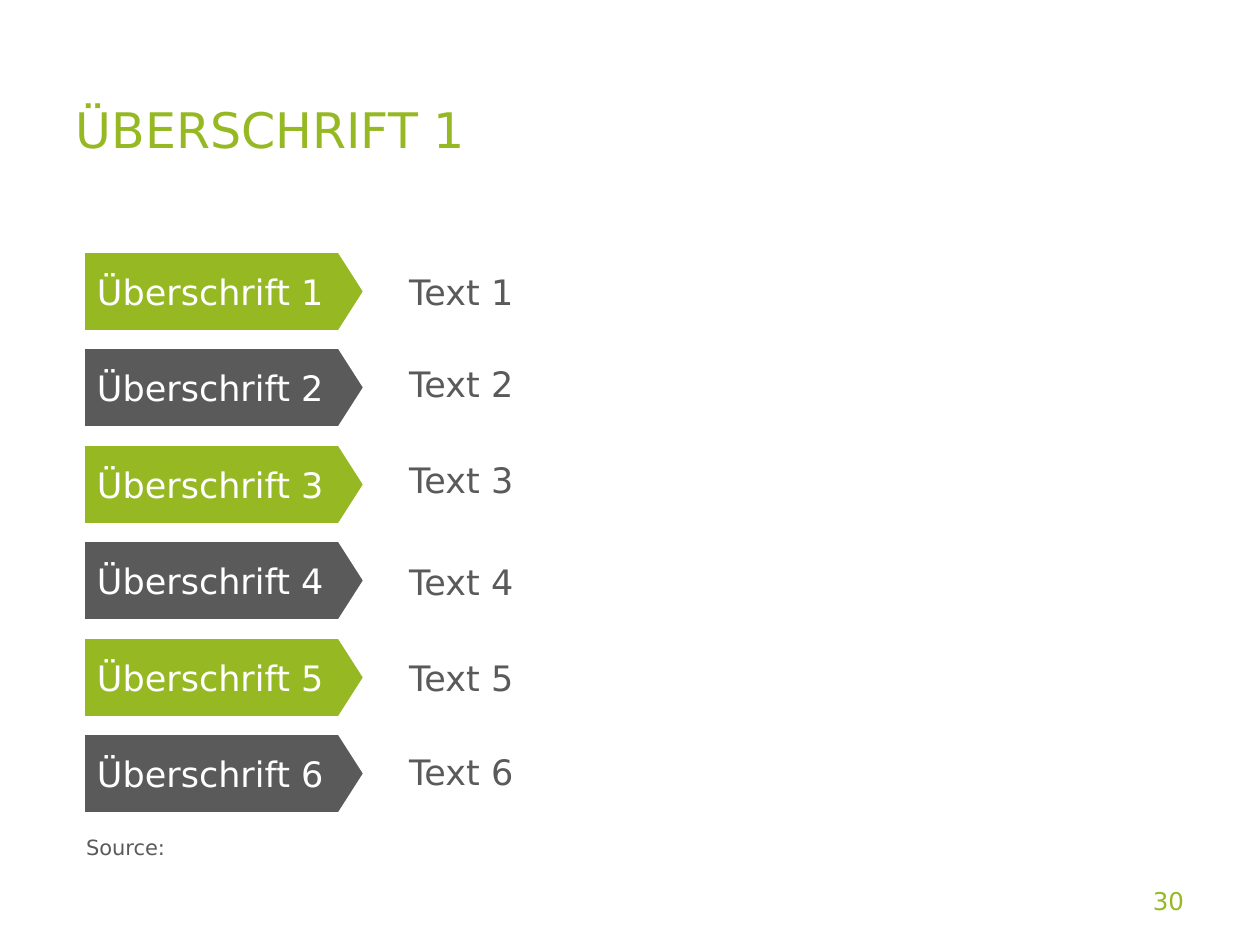
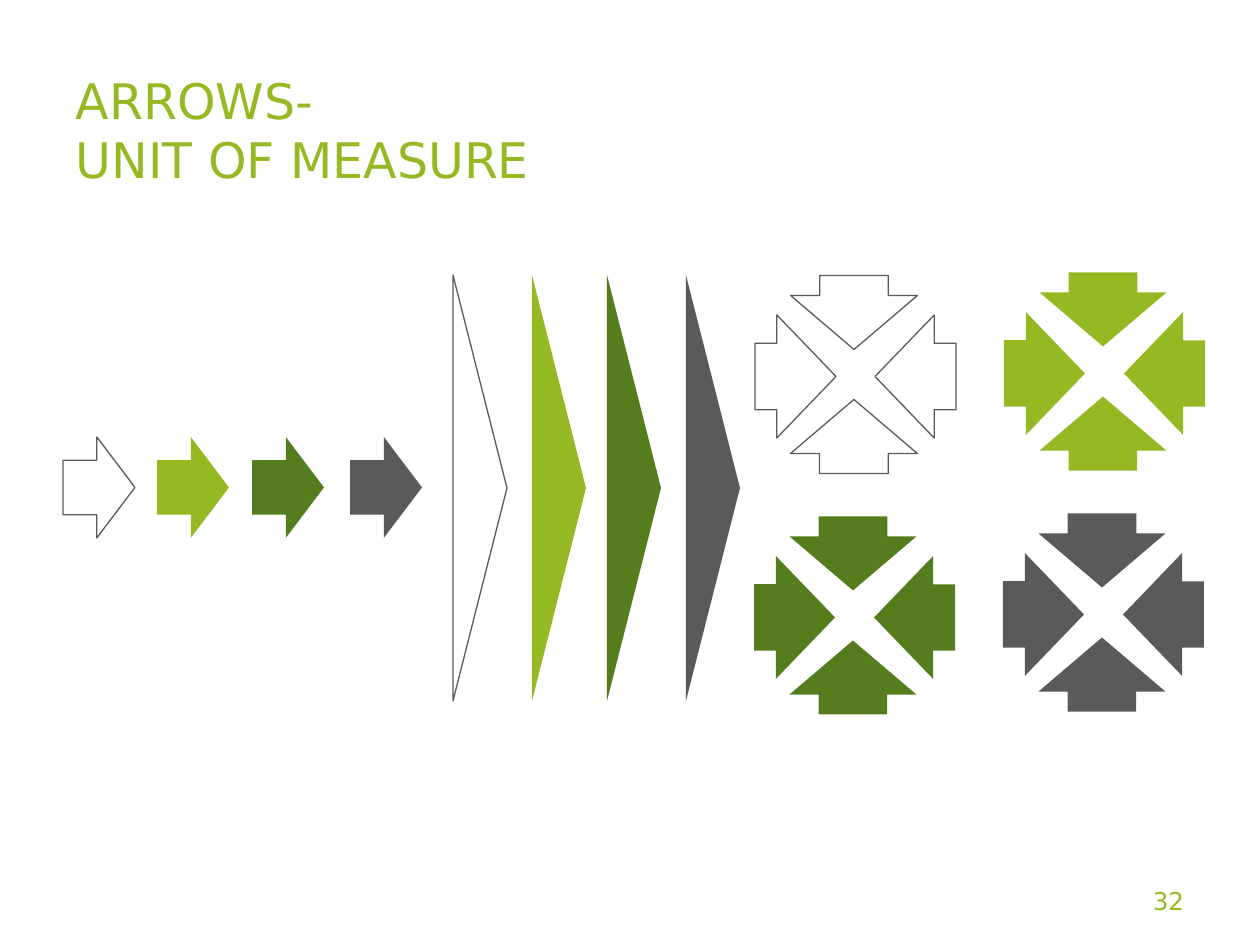
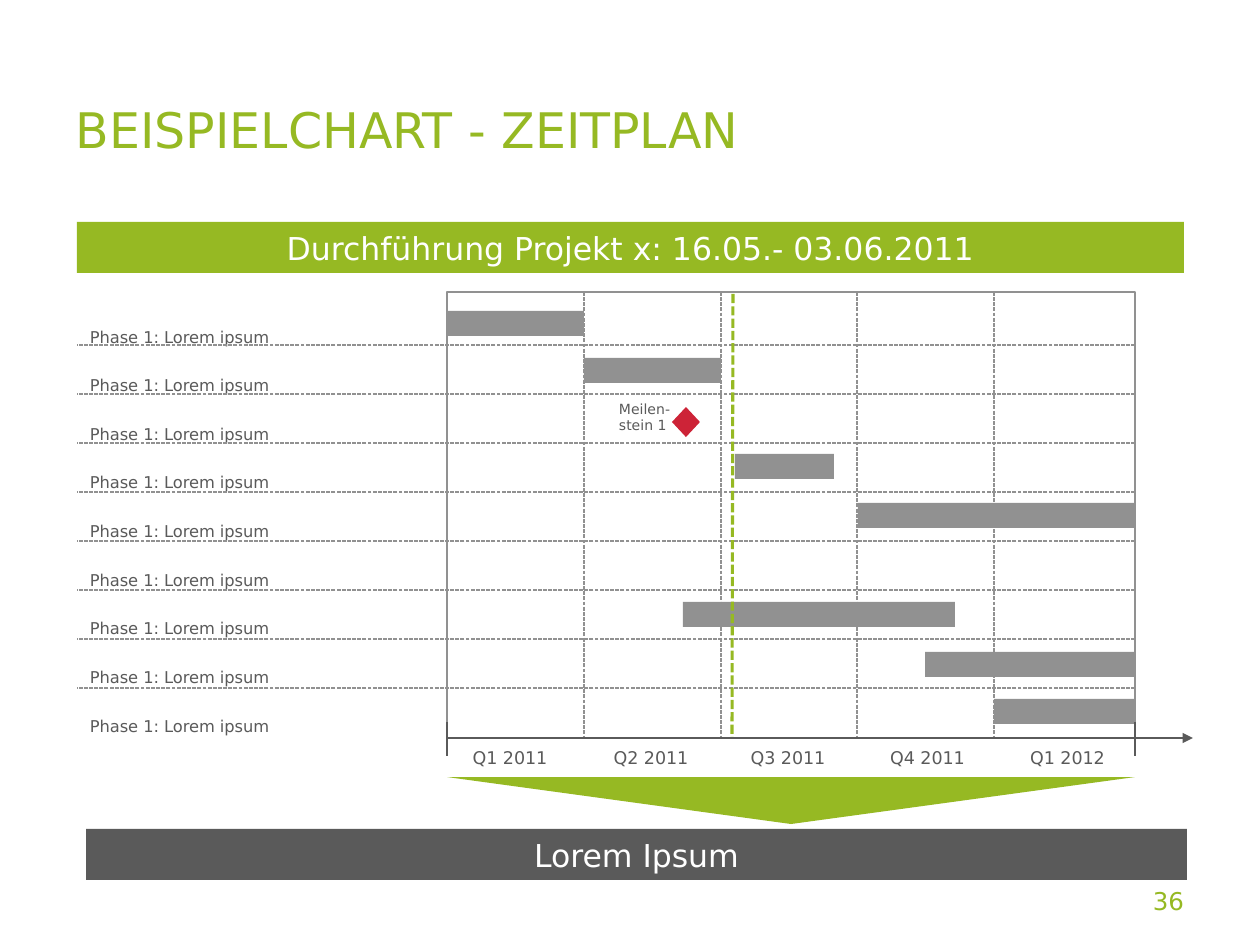
"""Build three slides: a heading list, an arrow collection and a project schedule."""
from lxml.etree import SubElement
from pptx import Presentation
from pptx.dml.color import RGBColor
from pptx.enum.dml import MSO_LINE
from pptx.enum.shapes import MSO_CONNECTOR, MSO_SHAPE
from pptx.enum.text import MSO_ANCHOR, PP_ALIGN
from pptx.oxml.ns import qn
from pptx.util import Pt

PX = 914400 / 126
FONT = "DejaVu Sans"
LIME = RGBColor(0x96, 0xB9, 0x23)
FOREST = RGBColor(0x55, 0x7D, 0x1E)
GRAPHITE = RGBColor(0x5A, 0x5A, 0x5A)
SILVER = RGBColor(0x91, 0x91, 0x91)
CRIMSON = RGBColor(0xCD, 0x23, 0x37)
WHITE = RGBColor(0xFF, 0xFF, 0xFF)

HEADINGS = [
    ("Überschrift 1", "Text 1", 252),
    ("Überschrift 2", "Text 2", 344),
    ("Überschrift 3", "Text 3", 440),
    ("Überschrift 4", "Text 4", 542),
    ("Überschrift 5", "Text 5", 638),
    ("Überschrift 6", "Text 6", 732),
]

ARROW_SETS = [
    (None, 63, 453, (755, 315)),
    (LIME, 157, 532, (1004, 312)),
    (FOREST, 252, 607, (754, 556)),
    (GRAPHITE, 350, 686, (1003, 553)),
]
INWARD_ARROWS = [
    (0, 0, 81, 123, 0),
    (120, 0, 81, 123, 180),
    (62, -66, 74, 127, 90),
    (62, 58, 74, 127, 270),
]

PHASES = ["Phase 1: Lorem ipsum"] * 9
QUARTERS = [
    ("Q1 2011", 447, 126),
    ("Q2 2011", 581, 140),
    ("Q3 2011", 718, 140),
    ("Q4 2011", 857, 141),
    ("Q1 2012", 1004, 127),
]
QUARTER_STARTS = (584, 721, 857, 994)
PHASE_BARS = [
    (447, 311, 137),
    (584, 358, 137),
    (735, 454, 99),
    (858, 503, 277),
    (683, 602, 272),
    (925, 652, 210),
    (994, 699, 141),
]
CHART_LEFT, CHART_TOP, CHART_RIGHT, CHART_BOTTOM = 447, 292, 1135, 738


def px(*lengths):
    return [round(length * PX) for length in lengths]


def write(shape, text, size, color, align=PP_ALIGN.LEFT, anchor=MSO_ANCHOR.MIDDLE, inset=(13, 6)):
    frame = shape.text_frame
    frame.word_wrap = True
    frame.vertical_anchor = anchor
    frame.margin_left = frame.margin_right = px(inset[0])[0]
    frame.margin_top = frame.margin_bottom = px(inset[1])[0]
    frame.text = text
    for paragraph in frame.paragraphs:
        paragraph.alignment = align
        paragraph.font.name = FONT
        paragraph.font.size = Pt(size)
        paragraph.font.color.rgb = color
    return frame


def add_text(slide, box, text, size, color=GRAPHITE, **layout):
    return write(slide.shapes.add_textbox(*px(*box)), text, size, color, **layout)


def add_block(shapes, kind, box, fill=None, line=None, weight=0.75, adjust=(), turn=0):
    block = shapes.add_shape(kind, *px(*box))
    block.shadow.inherit = False
    block.rotation = turn
    for index, value in enumerate(adjust):
        block.adjustments[index] = value
    if fill is None:
        block.fill.background()
    else:
        block.fill.solid()
        block.fill.fore_color.rgb = fill
    if line is None:
        block.line.fill.background()
    else:
        block.line.color.rgb = line
        block.line.width = Pt(weight)
    return block


def add_line(slide, ends, color, weight, dashed=False, arrow=False):
    line = slide.shapes.add_connector(MSO_CONNECTOR.STRAIGHT, *px(*ends))
    line.line.color.rgb = color
    line.line.width = Pt(weight)
    if dashed:
        line.line.dash_style = MSO_LINE.SQUARE_DOT
    if arrow:
        SubElement(line.line._get_or_add_ln(), qn("a:tailEnd"), type="triangle")
    SubElement(line._element.spPr, qn("a:effectLst"))


def add_page(deck, title, number):
    slide = deck.slides.add_slide(deck.slide_layouts[6])
    add_text(slide, (63, 63, 801, 132), title, 28, LIME)
    add_text(slide, (903, 876, 294, 50), str(number), 14, LIME, align=PP_ALIGN.RIGHT)
    return slide


def build_headings(deck):
    slide = add_page(deck, "ÜBERSCHRIFT 1", 30)
    for row, (heading, text, text_top) in enumerate(HEADINGS):
        plate = add_block(slide.shapes, MSO_SHAPE.PENTAGON, (84, 252 + row * 193 // 2, 280, 79),
                          (LIME, GRAPHITE)[row % 2], WHITE, 1, (0.32,))
        write(plate, heading, 20, WHITE, inset=(13, 0))
        panel = add_block(slide.shapes, MSO_SHAPE.RECTANGLE, (396, text_top, 790, 79), WHITE)
        write(panel, text, 20, GRAPHITE, inset=(13, 0))
    add_text(slide, (86, 835, 790, 25), "Source:", 12, anchor=MSO_ANCHOR.BOTTOM, inset=(0, 0))


def build_arrows(deck):
    slide = add_page(deck, "ARROWS-\vUNIT OF MEASURE", 32)
    for fill, arrow_left, wedge_left, (cluster_left, cluster_top) in ARROW_SETS:
        outline = GRAPHITE if fill is None else None
        add_block(slide.shapes, MSO_SHAPE.RIGHT_ARROW, (arrow_left, 437, 72, 101),
                  fill, outline, adjust=(0.54, 0.53))
        add_block(slide.shapes, MSO_SHAPE.ISOSCELES_TRIANGLE, (wedge_left - 186, 461, 426, 54),
                  fill, outline, turn=90)
        cluster = slide.shapes.add_group_shape()
        for dx, dy, width, height, turn in INWARD_ARROWS:
            add_block(cluster.shapes, MSO_SHAPE.RIGHT_ARROW,
                      (cluster_left + dx, cluster_top + dy, width, height),
                      fill, outline, adjust=(0.54, 0.73), turn=turn)


def build_schedule(deck):
    slide = add_page(deck, "BEISPIELCHART - ZEITPLAN", 36)
    shapes = slide.shapes
    chart_width = CHART_RIGHT - CHART_LEFT
    for left, top, width in PHASE_BARS:
        add_block(shapes, MSO_SHAPE.RECTANGLE, (left, top, width, 25), SILVER)
    add_block(shapes, MSO_SHAPE.RECTANGLE,
              (CHART_LEFT, CHART_TOP, chart_width, CHART_BOTTOM - CHART_TOP), line=SILVER)

    for box, fill, text in [
        ((77, 222, 1107, 51), LIME, "Durchführung Projekt x: 16.05.- 03.06.2011"),
        ((86, 829, 1101, 51), GRAPHITE, "Lorem Ipsum"),
    ]:
        banner = add_block(shapes, MSO_SHAPE.RECTANGLE, box, fill)
        write(banner, text, 18, WHITE, align=PP_ALIGN.CENTER)

    for x in QUARTER_STARTS:
        add_line(slide, (x, CHART_TOP, x, CHART_BOTTOM), SILVER, 0.75, dashed=True)
    for row, phase in enumerate(PHASES):
        if row:
            y = 296 + 49 * row
            add_line(slide, (CHART_RIGHT, y, 77, y), SILVER, 0.75, dashed=True)
        label = add_text(slide, (77, 301 + row * 389 // 8, 365, 45), phase, 16,
                         anchor=MSO_ANCHOR.TOP).paragraphs[0]
        label.line_spacing = 1.5
        label.runs[0]._r.get_or_add_rPr().set("baseline", "30000")
    for quarter, left, width in QUARTERS:
        add_text(slide, (left, 741, width, 32), quarter, 10, align=PP_ALIGN.CENTER)

    add_line(slide, (733, 294, 732, CHART_BOTTOM), LIME, 1.75, dashed=True)
    add_line(slide, (CHART_LEFT, CHART_BOTTOM, 1193, CHART_BOTTOM), GRAPHITE, 1.5, arrow=True)
    for x in (CHART_LEFT, CHART_RIGHT):
        add_line(slide, (x, 722, x, 756), GRAPHITE, 1.5)

    add_block(shapes, MSO_SHAPE.DIAMOND, (672, 407, 28, 30), CRIMSON)
    add_text(slide, (606, 394, 130, 47), "Meilen-\nstein 1", 8, anchor=MSO_ANCHOR.TOP)
    add_block(shapes, MSO_SHAPE.ISOSCELES_TRIANGLE, (CHART_LEFT, 777, chart_width, 47), LIME, turn=180)


def main():
    deck = Presentation()
    deck.slide_width, deck.slide_height = px(1260, 945)
    build_headings(deck)
    build_arrows(deck)
    build_schedule(deck)
    deck.save("out.pptx")


if __name__ == "__main__":
    main()
